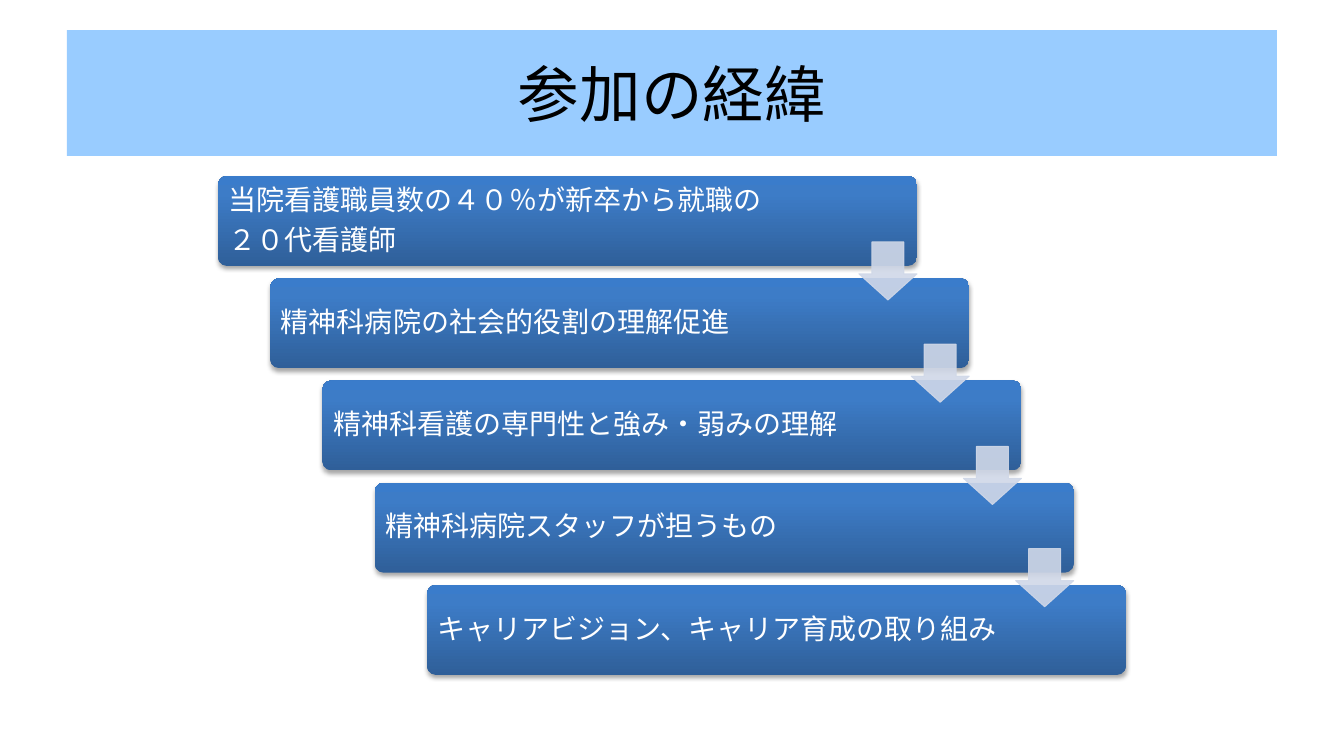
from copy import deepcopy

from lxml import etree
from pptx import Presentation
from pptx import util as u
from pptx.dml.color import RGBColor
from pptx.enum import shapes, text
from pptx.oxml.ns import qn

TITLE = "参加の経緯"
STEPS = [
    ["当院看護職員数の４０％が新卒から就職の", "２０代看護師"],
    ["精神科病院の社会的役割の理解促進"],
    ["精神科看護の専門性と強み・弱みの理解"],
    ["精神科病院スタッフが担うもの"],
    ["キャリアビジョン、キャリア育成の取り組み"],
]

FONT = "Noto Sans CJK JP"
BLACK = RGBColor(0x00, 0x00, 0x00)
WHITE = RGBColor(0xFF, 0xFF, 0xFF)
SKY = RGBColor(0x99, 0xCC, 0xFF)
PALE = RGBColor(0xD0, 0xD8, 0xE8)
BLUES = [(0, RGBColor(0x2F, 0x5F, 0x99)),
         (0.8, RGBColor(0x3D, 0x7C, 0xC7)),
         (1, RGBColor(0x3A, 0x7C, 0xCB))]

PX = 914400 / 100.8
SLIDE_W, SLIDE_H = 1344, 756
TITLE_BOX = (67, 30, 1210, 126)
FIRST_X, FIRST_Y = 218, 176
STAIR_W, STAIR_H = 209, 409  # from the first step to the last
STEP_W, STEP_H = 699, 90
ARROW, ARROW_DROP = 58, 66
INSET, INSET_RIGHT = 8, 111


def px(n):
    return u.Emu(round(n * PX))


def add_run(p, words, size, color):
    r = p.add_run()
    r.text = words
    r.font.size, r.font.name = u.Pt(size), FONT
    r.font.color.rgb = color
    etree.SubElement(r.font._element, qn("a:ea"), typeface=FONT)


def add_preset(s, kind, box, adjustments):
    sp = s.shapes.add_shape(kind, *map(px, box))
    for i, value in enumerate(adjustments):
        sp.adjustments[i] = value
    sp.shadow.inherit = False
    return sp


def fill_blue(sp):
    """Shade upwards through the three blues."""
    sp.fill.gradient()
    sp.fill.gradient_angle = 90
    stops = sp._element.spPr.find(".//" + qn("a:gsLst"))
    stops.insert(1, deepcopy(stops[0]))
    for stop, (position, color) in zip(sp.fill.gradient_stops, BLUES):
        stop.position, stop.color.rgb = position, color


def add_shadow(sp):
    effects = sp._element.spPr.find(qn("a:effectLst"))
    shadow = etree.SubElement(effects, qn("a:outerShdw"), blurRad="40000",
                              dist="23000", dir="5400000", rotWithShape="0")
    color = etree.SubElement(shadow, qn("a:srgbClr"), val=str(BLACK))
    etree.SubElement(color, qn("a:alpha"), val="35000")


def add_step(s, x, y, lines):
    sp = add_preset(s, shapes.MSO_SHAPE.ROUNDED_RECTANGLE,
                    (x, y, STEP_W, STEP_H), [0.1])
    fill_blue(sp)
    sp.line.fill.background()
    add_shadow(sp)
    tf = sp.text_frame
    tf.word_wrap = True
    tf.vertical_anchor = text.MSO_ANCHOR.MIDDLE
    tf.margin_left = tf.margin_top = tf.margin_bottom = px(INSET)
    tf.margin_right = px(INSET_RIGHT)
    for i, words in enumerate(lines):
        p = tf.add_paragraph() if i else tf.paragraphs[0]
        p.alignment = text.PP_ALIGN.LEFT
        p.line_spacing = 0.9
        after = etree.SubElement(p._p.get_or_add_pPr(), qn("a:spcAft"))
        etree.SubElement(after, qn("a:spcPct"), val="35000")
        add_run(p, words, 20, WHITE)


def add_arrow(s, x, y):
    sp = add_preset(s, shapes.MSO_SHAPE.DOWN_ARROW,
                    (x, y, ARROW, ARROW), [0.55, 0.45])
    sp.fill.solid()
    sp.fill.fore_color.rgb = sp.line.color.rgb = PALE
    sp.line.width = u.Pt(0.75)
    for color in sp._element.spPr.iter(qn("a:srgbClr")):
        etree.SubElement(color, qn("a:alpha"), val="90000")


def add_title(s):
    sp = s.shapes.title
    sp.left, sp.top, sp.width, sp.height = map(px, TITLE_BOX)
    sp.fill.solid()
    sp.fill.fore_color.rgb = SKY
    tf = sp.text_frame
    tf.vertical_anchor = text.MSO_ANCHOR.MIDDLE
    p = tf.paragraphs[0]
    p.alignment = text.PP_ALIGN.CENTER
    add_run(p, TITLE, 44, BLACK)


def main():
    prs = Presentation()
    prs.slide_width, prs.slide_height = px(SLIDE_W), px(SLIDE_H)
    s = prs.slides.add_slide(prs.slide_layouts[5])
    add_title(s)
    gaps = len(STEPS) - 1
    corners = [(FIRST_X + STAIR_W * i / gaps, FIRST_Y + STAIR_H * i / gaps)
               for i in range(len(STEPS))]
    for (x, y), lines in zip(corners, STEPS):
        add_step(s, x, y, lines)
    for x, y in corners[:-1]:
        add_arrow(s, x + STEP_W - ARROW, y + ARROW_DROP)
    prs.save("out.pptx")


if __name__ == "__main__":
    main()
